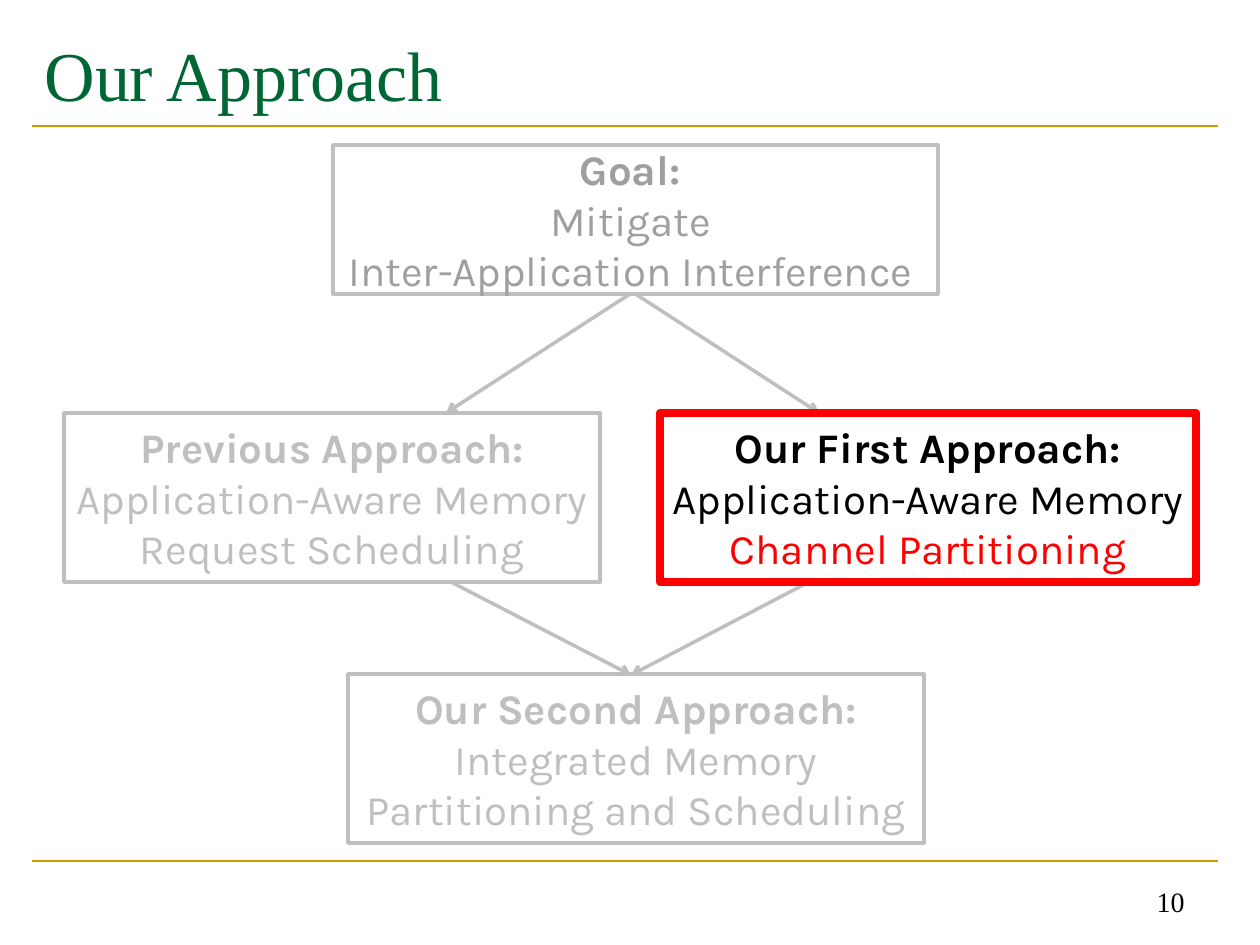
"""Build the "Our Approach" slide: a goal, two approaches and their combination."""
from lxml import etree
from pptx import Presentation
from pptx.dml.color import RGBColor
from pptx.enum.shapes import MSO_CONNECTOR, MSO_SHAPE
from pptx.enum.text import MSO_ANCHOR, PP_ALIGN
from pptx.oxml.ns import qn
from pptx.util import Emu, Pt

LEFT, CENTER, RIGHT = PP_ALIGN.LEFT, PP_ALIGN.CENTER, PP_ALIGN.RIGHT
MIDDLE, BOTTOM = MSO_ANCHOR.MIDDLE, MSO_ANCHOR.BOTTOM
STRAIGHT, RECT = MSO_CONNECTOR.STRAIGHT, MSO_SHAPE.RECTANGLE

COLORS = {"gold": "CC9900", "green": "006633", "black": "000000",
          "pale": "BFBFBF", "gray": "9F9F9F", "red": "FF0000"}
SERIF, SANS = "Times New Roman", "Karla"

TITLE = ("Our Approach", (32, 21, 1187, 105))
NUMBER = ("10", (903, 861, 294, 63))
RULES = [(32, y, 1218, y) for y in (861, 126)]
ARROWS = {
    "goal to previous": (630, 294, 446, 413),
    "goal to first": (635, 294, 819, 413),
    "previous to second": (451, 582, 631, 675),
    "first to second": (809, 582, 631, 675),
}
BOXES = {
    "previous": ((64, 413, 536, 169), "pale", 2, [
        [("Previous Approach:", "pale", True)],
        [("Application-Aware Memory Request Scheduling", "pale", False)]]),
    "second": ((348, 674, 576, 169), "pale", 2, [
        [("Our Second Approach:", "pale", True),
         (" Integrated Memory Partitioning and Scheduling", "pale", False)]]),
    "first": ((660, 413, 536, 169), "red", 5, [
        [("Our First Approach:", "black", True)],
        [("Application-Aware Memory ", "black", False),
         ("Channel Partitioning", "red", False)]]),
    "goal": ((333, 145, 605, 149), "pale", 2, [
        [("Goal: ", "gray", True)],
        [("Mitigate ", "gray", False)],
        [("Inter-Application Interference ", "gray", False)]]),
}


def px(*lengths):
    return [Emu(round(n * 914400 / 126)) for n in lengths]


def rgb(name):
    return RGBColor.from_string(COLORS[name])


def write(shape, paragraphs, font, size, align, anchor, inset=Pt(7.2)):
    tf = shape.text_frame
    frame = {"word_wrap": True, "vertical_anchor": anchor,
             "margin_left": inset, "margin_right": inset}
    for key, value in frame.items():
        setattr(tf, key, value)
    for i, runs in enumerate(paragraphs):
        p = tf.add_paragraph() if i else tf.paragraphs[0]
        p.alignment = align
        for text, color, bold in runs:
            r = p.add_run()
            r.text = text
            for key, value in {"name": font, "size": Pt(size), "bold": bold}.items():
                setattr(r.font, key, value)
            r.font.color.rgb = rgb(color)


def add_line(s, ends, color, width, arrow=False):
    line = s.shapes.add_connector(STRAIGHT, *px(*ends))
    line.line.color.rgb = rgb(color)
    line.line.width = Pt(width)
    if arrow:
        etree.SubElement(line.line._get_or_add_ln(), qn("a:tailEnd"), type="arrow")
    etree.SubElement(line._element.spPr, qn("a:effectLst"))
    return line


def add_box(s, place, color, width, paragraphs):
    box = s.shapes.add_shape(RECT, *px(*place))
    box.shadow.inherit = False
    box.fill.background()
    box.line.color.rgb = rgb(color)
    box.line.width = Pt(width)
    write(box, paragraphs, SANS, 24, CENTER, MIDDLE, Pt(5))
    return box


def main():
    prs = Presentation()
    prs.slide_width, prs.slide_height = px(1260, 945)
    s = prs.slides.add_slide(prs.slide_layouts[5])

    for ends in RULES:
        add_line(s, ends, "gold", 1.5)

    text, place = TITLE
    title = s.shapes.title
    title.left, title.top, title.width, title.height = px(*place)
    write(title, [[(text, "green", False)]], SERIF, 40, LEFT, MIDDLE)

    text, place = NUMBER
    number = s.shapes.add_textbox(*px(*place))
    write(number, [[(text, "black", False)]], SERIF, 16, RIGHT, BOTTOM)

    arrows = {name: add_line(s, ends, "pale", 2, True) for name, ends in ARROWS.items()}
    boxes = {name: add_box(s, *box) for name, box in BOXES.items()}
    arrows["goal to first"].begin_connect(boxes["goal"], 2)

    prs.save("out.pptx")


if __name__ == "__main__":
    main()
